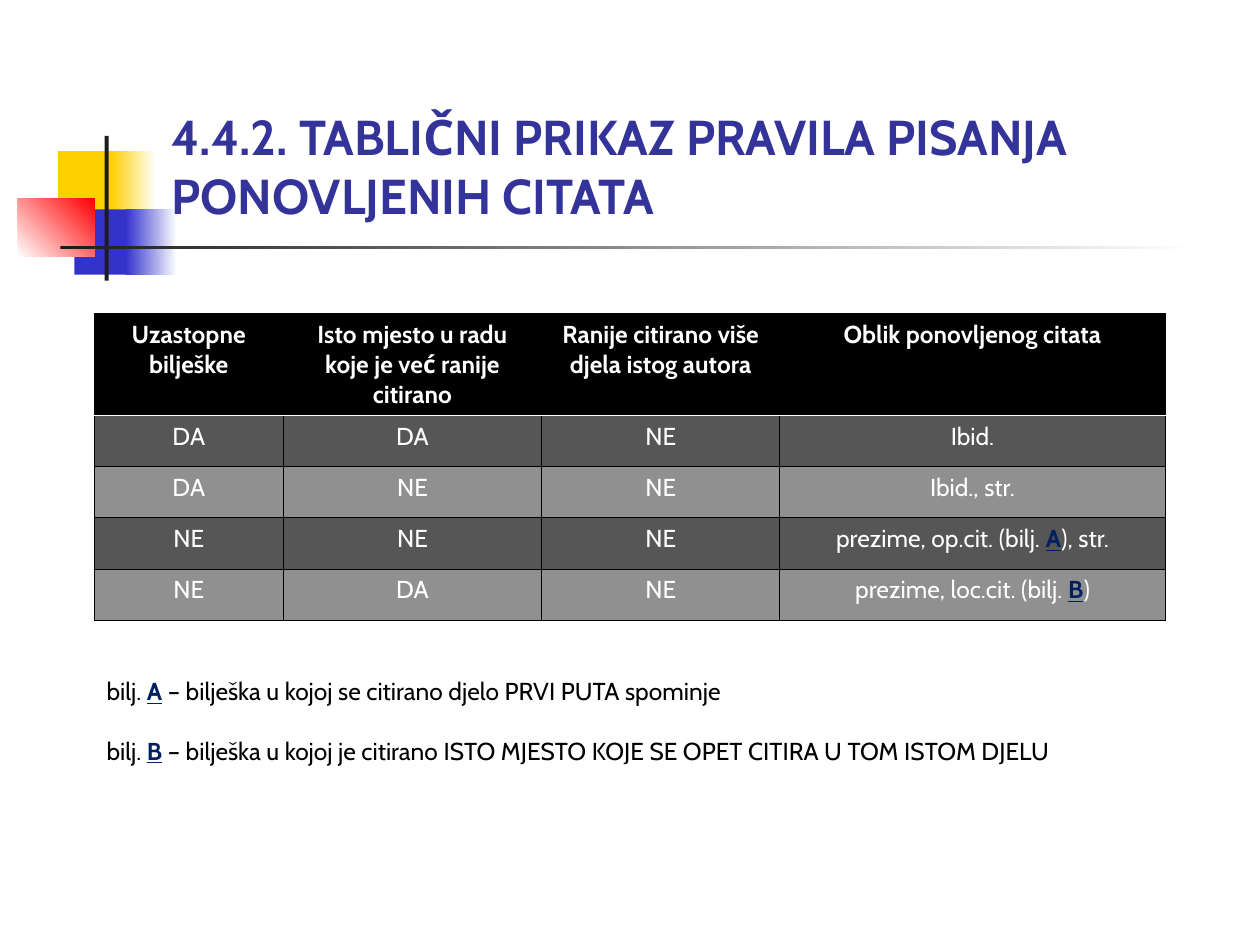
from lxml import etree
from pptx import Presentation
from pptx.dml.color import RGBColor
from pptx.enum.shapes import MSO_SHAPE
from pptx.enum.text import MSO_ANCHOR, MSO_AUTO_SIZE, PP_ALIGN
from pptx.oxml.ns import qn
from pptx.util import Cm, Pt

RECTANGLE = MSO_SHAPE.RECTANGLE
BOTTOM = MSO_ANCHOR.BOTTOM
NO_AUTO_SIZE = MSO_AUTO_SIZE.NONE
LEFT, CENTER = PP_ALIGN.LEFT, PP_ALIGN.CENTER

BLACK = RGBColor(0x00, 0x00, 0x00)
WHITE = RGBColor(0xFF, 0xFF, 0xFF)
YELLOW = RGBColor(0xFF, 0xCF, 0x01)
BLUE = RGBColor(0x33, 0x33, 0xCC)
RED = RGBColor(0xFF, 0x00, 0x00)
CHARCOAL = RGBColor(0x1C, 0x1C, 0x1C)
INDIGO = RGBColor(0x33, 0x33, 0x99)
NAVY = RGBColor(0x00, 0x20, 0x60)
DARK_GRAY = RGBColor(0x56, 0x56, 0x56)
LIGHT_GRAY = RGBColor(0x90, 0x90, 0x90)

# Left, top, width, height in cm, then fill colours and gradient angle.
ORNAMENTS = [
    (1.17, 3.05, 1.22, 1.32, [YELLOW], 0),
    (2.24, 3.05, 0.91, 1.32, [YELLOW, WHITE], 0),
    (1.5, 4.22, 1.17, 1.32, [BLUE], 0),
    (2.54, 4.22, 1.02, 1.32, [BLUE, WHITE], 0),
    (0.36, 4.01, 1.55, 1.17, [WHITE, RED], 45),
    (2.11, 2.74, 0.08, 2.92, [CHARCOAL], 0),
    (1.22, 4.95, 22.86, 0.08, [CHARCOAL, WHITE], 0),
]
TITLE = "4.4.2. TABLIČNI PRIKAZ PRAVILA PISANJA PONOVLJENIH CITATA"
# In each list of text pieces, every second piece is a note letter.
HEADER = [["Uzastopne bilješke"], ["Isto mjesto u radu koje je već ranije citirano"],
          ["Ranije citirano više djela istog autora"], ["Oblik ponovljenog citata"]]
RULES = [
    [["DA"], ["DA"], ["NE"], ["Ibid."]],
    [["DA"], ["NE"], ["NE"], ["Ibid., str."]],
    [["NE"], ["NE"], ["NE"], ["prezime, op.cit. (bilj. ", "A", "), str."]],
    [["NE"], ["DA"], ["NE"], ["prezime, loc.cit. (bilj. ", "B", ")"]],
]
NOTES = [
    ["bilj. ", "A", " – bilješka u kojoj se citirano djelo PRVI PUTA spominje"],
    ["bilj. ", "B", " – bilješka u kojoj je citirano ISTO MJESTO KOJE SE OPET CITIRA "
     "U TOM ISTOM DJELU"],
]
COLUMN_WIDTHS = [3.81, 5.21, 4.8, 7.77]
HEADER_HEIGHT, ROW_HEIGHT = 2.06, 1.03


class SlideBuilder:
    """Holds the text style and the slide being built."""

    font_name = "Cabin"
    body_size = Pt(14)

    def __init__(self, slide):
        """Keep the slide."""
        self.slide = slide

    def add_run(self, paragraph, text, color, size=body_size, bold=False, underline=False):
        """Add one formatted run."""
        run = paragraph.add_run()
        run.text = text
        font = run.font
        font.name, font.size = self.font_name, size
        font.bold, font.underline = bold, underline
        font.color.rgb = color

    def add_pieces(self, paragraph, pieces, color, bold=False):
        """Add text pieces, marking every second one as a note letter."""
        for index, text in enumerate(pieces):
            if index % 2:
                self.add_run(paragraph, text, NAVY, bold=True, underline=True)
            else:
                self.add_run(paragraph, text, color, bold=bold)

    def add_ornament(self, left, top, width, height, colors, angle):
        """Add a rectangle with a solid or two-colour gradient fill."""
        shape = self.slide.shapes.add_shape(
            RECTANGLE, Cm(left), Cm(top), Cm(width), Cm(height))
        shape.shadow.inherit = False
        shape.line.fill.background()
        if len(colors) == 1:
            shape.fill.solid()
            shape.fill.fore_color.rgb = colors[0]
            return
        shape.fill.gradient()
        shape.fill.gradient_angle = angle
        for stop, position, color in zip(shape.fill.gradient_stops, (0, 1), colors):
            stop.position = position
            stop.color.rgb = color

    def set_title(self, text):
        """Place the title in front of the ornaments and format it."""
        title = self.slide.shapes.title
        self.slide.shapes.element.append(title.element)
        title.left, title.top = Cm(3.2), Cm(0.58)
        title.width, title.height = Cm(21.64), Cm(4.06)
        frame = title.text_frame
        frame.word_wrap = True
        frame.auto_size = NO_AUTO_SIZE
        frame.vertical_anchor = BOTTOM
        paragraph = frame.paragraphs[0]
        paragraph.alignment = LEFT
        self.add_run(paragraph, text, INDIGO, Pt(28), bold=True)

    def set_border(self, cell, side, color, width):
        """Draw one side of a cell border."""
        properties = cell._tc.get_or_add_tcPr()
        line = etree.SubElement(properties, qn(f"a:ln{side}"), w=str(Pt(width)))
        fill = etree.SubElement(line, qn("a:solidFill"))
        etree.SubElement(fill, qn("a:srgbClr"), val=str(color))

    def fill_cell(self, cell, pieces, row_index):
        """Format one cell according to its row."""
        is_header = row_index == 0
        white_side = {0: "B", 1: "T"}.get(row_index)
        for side in "LRTB":
            if side == white_side:
                self.set_border(cell, side, WHITE, 1)
            else:
                self.set_border(cell, side, BLACK, 0.5)
        cell.fill.solid()
        band = DARK_GRAY if row_index % 2 else LIGHT_GRAY
        cell.fill.fore_color.rgb = BLACK if is_header else band
        paragraph = cell.text_frame.paragraphs[0]
        paragraph.alignment = CENTER
        self.add_pieces(paragraph, pieces, WHITE, bold=is_header)

    def add_table(self, left, top, rows):
        """Add the table of citation rules."""
        heights = [HEADER_HEIGHT] + [ROW_HEIGHT] * (len(rows) - 1)
        table = self.slide.shapes.add_table(
            len(rows), len(COLUMN_WIDTHS), Cm(left), Cm(top),
            Cm(sum(COLUMN_WIDTHS)), Cm(sum(heights))).table
        for column, width in zip(table.columns, COLUMN_WIDTHS):
            column.width = Cm(width)
        for row_index, (row, height) in enumerate(zip(rows, heights)):
            table.rows[row_index].height = Cm(height)
            for column_index, pieces in enumerate(row):
                self.fill_cell(table.cell(row_index, column_index), pieces, row_index)

    def add_notes(self, left, top, width, height, notes):
        """Add the explanations below the table."""
        frame = self.slide.shapes.add_textbox(
            Cm(left), Cm(top), Cm(width), Cm(height)).text_frame
        frame.word_wrap = True
        for index, pieces in enumerate(notes):
            paragraph = frame.add_paragraph() if index else frame.paragraphs[0]
            paragraph.space_before = Pt(17 if index else 0)
            self.add_pieces(paragraph, pieces, BLACK)


def main():
    """Build and save the presentation."""
    presentation = Presentation()
    presentation.slide_width, presentation.slide_height = Cm(25.4), Cm(19.05)
    builder = SlideBuilder(presentation.slides.add_slide(presentation.slide_layouts[5]))
    for ornament in ORNAMENTS:
        builder.add_ornament(*ornament)
    builder.set_title(TITLE)
    builder.add_table(1.9, 6.32, [HEADER] + RULES)
    builder.add_notes(1.9, 13.51, 21.64, 2.06, NOTES)
    presentation.save("out.pptx")


main()
